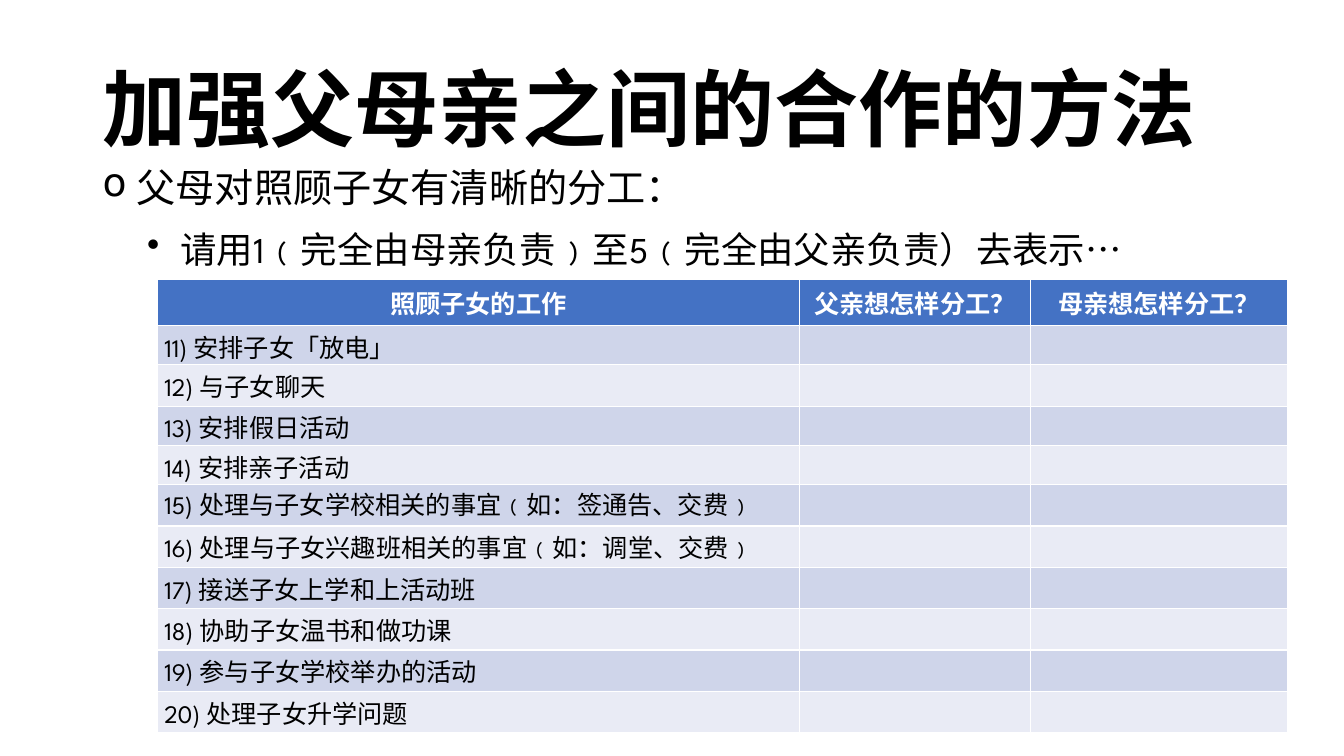
from lxml import etree
from pptx import Presentation
from pptx.dml.color import RGBColor
from pptx.enum.text import MSO_ANCHOR, PP_ALIGN
from pptx.oxml.ns import qn
from pptx.util import Inches, Pt

COLORS = {"text": "000000", "white": "FFFFFF", "header": "4472C4",
          "odd": "CFD5EA", "even": "E9EBF5"}
CJK = "Noto Sans CJK SC"
LATIN = "League Spartan"

HEADERS = ["照顾子女的工作", "父亲想怎样分工？", "母亲想怎样分工？"]
FIRST_NUMBER = 11
TASKS = ["安排子女「放电」", "与子女聊天", "安排假日活动", "安排亲子活动",
         "处理与子女学校相关的事宜﹙如：签通告、交费﹚",
         "处理与子女兴趣班相关的事宜﹙如：调堂、交费﹚",
         "接送子女上学和上活动班", "协助子女温书和做功课",
         "参与子女学校举办的活动", "处理子女升学问题"]
SINGLE_SPACED = 15
COL_WIDTHS = [6.37, 2.29, 2.55]
ROW_HEIGHTS = [0.46, 0.39, 0.41, 0.39, 0.39] + [0.41] * 6


def style(p, size, name, color="text", bold=False):
    p.font.size = Pt(size)
    p.font.name = name
    p.font.bold = bold
    p.font.color.rgb = RGBColor.from_string(COLORS[color])


def add_text(slide, box, text, size, name, bold=False, anchor=MSO_ANCHOR.TOP):
    tf = slide.shapes.add_textbox(*map(Inches, box)).text_frame
    tf.word_wrap = True
    tf.vertical_anchor = anchor
    p = tf.paragraphs[0]
    p.text = text
    p.line_spacing = 0.9
    style(p, size, name, bold=bold)
    return p


def add_bullet(slide, box, char, text, size, name):
    p = add_text(slide, box, text, size, name)
    p.space_before = Pt(10)
    pPr = p._p.get_or_add_pPr()
    pPr.set("marL", str(Inches(0.25)))
    pPr.set("indent", str(Inches(-0.25)))
    bullet = etree.Element(qn("a:buChar"), char=char)
    pPr.find(qn("a:defRPr")).addprevious(bullet)


def fill_cell(cell, color):
    cell.fill.solid()
    cell.fill.fore_color.rgb = RGBColor.from_string(COLORS[color])


def add_task_table(slide, box):
    table = slide.shapes.add_table(len(TASKS) + 1, len(HEADERS),
                                   *map(Inches, box)).table
    for column, width in zip(table.columns, COL_WIDTHS):
        column.width = Inches(width)
    for row, height in zip(table.rows, ROW_HEIGHTS):
        row.height = Inches(height)

    for cell, header in zip(table.rows[0].cells, HEADERS):
        fill_cell(cell, "header")
        p = cell.text_frame.paragraphs[0]
        p.text = header
        p.alignment = PP_ALIGN.CENTER
        style(p, 18, LATIN, "white", True)

    for i, task in enumerate(TASKS):
        number = FIRST_NUMBER + i
        cells = table.rows[i + 1].cells
        for cell, text in zip(cells, [f"{number}) {task}", "", ""]):
            fill_cell(cell, "even" if i % 2 else "odd")
            cell.margin_left = cell.margin_right = Inches(0.07)
            cell.margin_top = cell.margin_bottom = 0
            p = cell.text_frame.paragraphs[0]
            p.text = text
            if text and number != SINGLE_SPACED:
                p.line_spacing = 1.07
            style(p, 18, LATIN)


def build_slide(prs):
    slide = prs.slides.add_slide(prs.slide_layouts[6])
    add_text(slide, (0.92, 0.4, 11.5, 1.45), "加强父母亲之间的合作的方法",
             60, CJK, True, MSO_ANCHOR.MIDDLE)
    add_bullet(slide, (0.92, 1.62, 11.5, 0.62), "o",
               " 父母对照顾子女有清晰的分工：", 28, CJK)
    add_bullet(slide, (1.36, 2.25, 11.42, 0.52), "•",
               " 请用1﹙完全由母亲负责﹚至5﹙完全由父亲负责）去表示…", 26, LATIN)
    add_task_table(slide, (1.56, 2.77, sum(COL_WIDTHS), sum(ROW_HEIGHTS)))


def main():
    prs = Presentation()
    prs.slide_width = Inches(13.33)
    prs.slide_height = Inches(7.5)
    build_slide(prs)
    prs.save("out.pptx")


if __name__ == "__main__":
    main()
